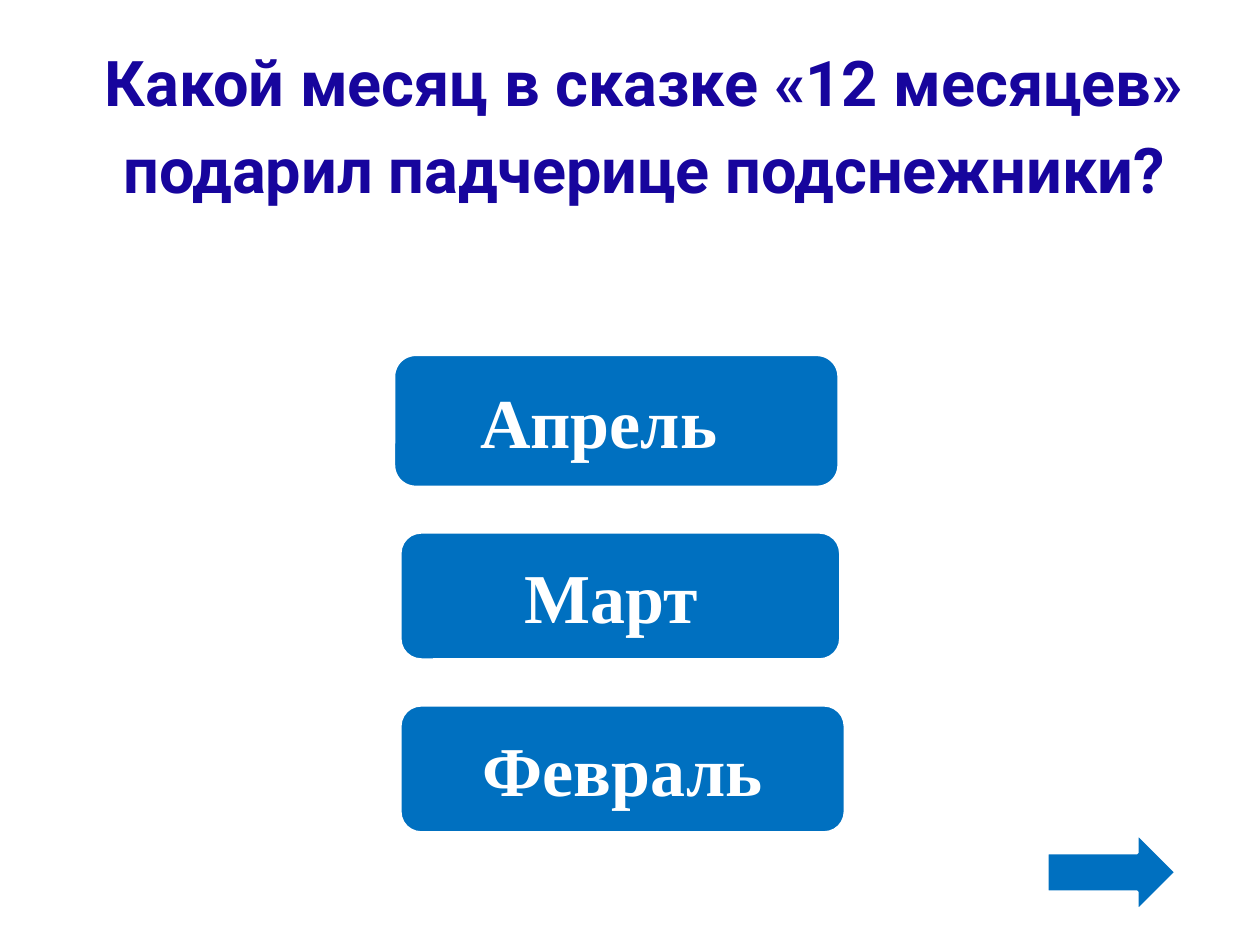
import pptx
import pptx.util
import pptx.dml.color
import pptx.enum.shapes
import pptx.enum.text

Pt = pptx.util.Pt
SHAPE = pptx.enum.shapes.MSO_SHAPE
ANCHOR = pptx.enum.text.MSO_ANCHOR
CENTER = pptx.enum.text.PP_ALIGN.CENTER
COLORS = {"title": "17059D", "button": "0070C0", "white": "FFFFFF"}


def rgb(name):
    return pptx.dml.color.RGBColor.from_string(COLORS[name])


def add_button(s, kind, left, top, width, height):
    sp = s.shapes.add_shape(kind, Pt(left), Pt(top), Pt(width), Pt(height))
    sp.shadow.inherit = False
    sp.fill.solid()
    sp.fill.fore_color.rgb = rgb("button")
    sp.line.color.rgb = rgb("white")
    sp.line.width = Pt(2)
    return sp


prs = pptx.Presentation()
prs.slide_width, prs.slide_height = Pt(720), Pt(540)
s = prs.slides.add_slide(prs.slide_layouts[5])

# Question
sp = s.shapes.title
sp.left, sp.top, sp.width, sp.height = Pt(31), Pt(15), Pt(674.6), Pt(154)
tf = sp.text_frame
tf.text = "Какой месяц в сказке «12 месяцев» подарил падчерице подснежники?"
tf.word_wrap = True
tf.auto_size = pptx.enum.text.MSO_AUTO_SIZE.NONE
tf.vertical_anchor = ANCHOR.TOP
p = tf.paragraphs[0]
p.alignment = CENTER
p.line_spacing = 1.15
p.font.name, p.font.size, p.font.bold = "Roboto", Pt(36), True
p.font.color.rgb = rgb("title")

# Answers: text, left, top, width, height, right inset
answers = [
    ("Апрель", 224.9, 202.5, 254.6, 76, 27.2),
    ("Март", 228.5, 304, 252, 73.2, 17.2),
    ("Февраль", 228.5, 402.8, 254.6, 73.2, 7.2),
]
for text, left, top, width, height, inset in answers:
    sp = add_button(s, SHAPE.ROUNDED_RECTANGLE, left, top, width, height)
    tf = sp.text_frame
    tf.text = text
    tf.word_wrap = True
    tf.vertical_anchor = ANCHOR.MIDDLE
    tf.margin_right = Pt(inset)
    p = tf.paragraphs[0]
    p.alignment = CENTER
    p.font.name, p.font.size, p.font.bold = "Times New Roman", Pt(40), True
    p.font.color.rgb = rgb("white")

# Next arrow
add_button(s, SHAPE.RIGHT_ARROW, 598.2, 476, 74, 45)

prs.save("out.pptx")
